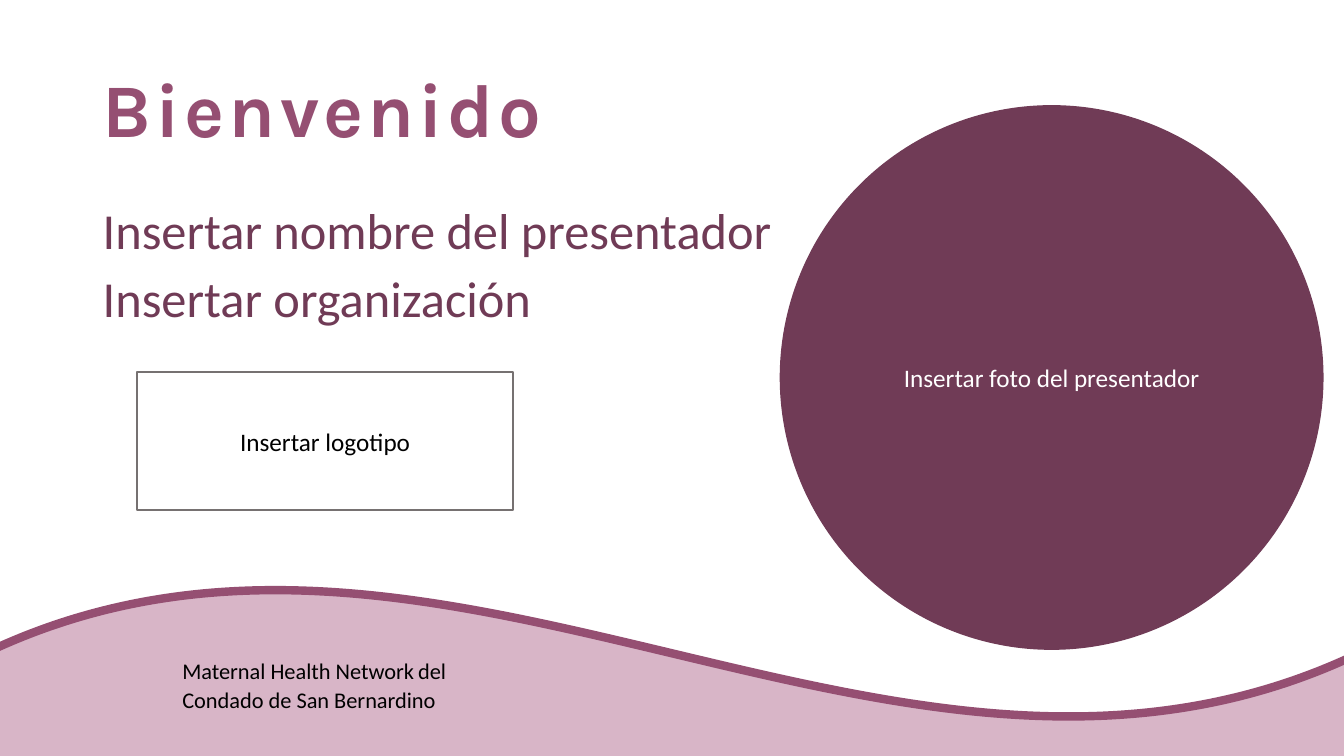
from pptx import Presentation
from pptx.dml.color import RGBColor
from pptx.enum.shapes import MSO_SHAPE
from pptx.enum.text import MSO_ANCHOR, PP_ALIGN
from pptx.util import Inches, Pt

WAVE, OVAL, RECT = MSO_SHAPE.WAVE, MSO_SHAPE.OVAL, MSO_SHAPE.RECTANGLE
TOP, MIDDLE = MSO_ANCHOR.TOP, MSO_ANCHOR.MIDDLE
LEFT, CENTER = PP_ALIGN.LEFT, PP_ALIGN.CENTER
PLUM, MAUVE, PINK = "703B56", "954F72", "D8B5C7"
WHITE, BLACK, GRAY = "FFFFFF", "000000", "767171"


def rgb(value):
    return RGBColor.from_string(value)


def add_run(paragraph, text, size, color, font="Calibri", bold=False):
    run = paragraph.add_run()
    run.text = text
    run.font.size = Pt(size)
    run.font.name = font
    run.font.bold = bold
    run.font.color.rgb = rgb(color)
    return run


prs = Presentation()
prs.slide_width, prs.slide_height = Inches(13.33), Inches(7.5)
slide = prs.slides.add_slide(prs.slide_layouts[6])
slide.background.fill.solid()
slide.background.fill.fore_color.rgb = rgb(WHITE)

panels = []
for kind, box, fill, line, width in [
    (WAVE, (-0.15, 5.83, 13.63, 5.21), PINK, MAUVE, 6),
    (OVAL, (7.74, 1.05, 5.38, 5.39), PLUM, PLUM, 1),
    (RECT, (1.36, 3.69, 3.73, 1.37), WHITE, GRAY, 1),
    (RECT, (1.71, 6.45, 3.13, 0.6), PINK, None, 0),
]:
    panel = slide.shapes.add_shape(kind, *map(Inches, box))
    panel.shadow.inherit = False
    panel.fill.solid()
    panel.fill.fore_color.rgb = rgb(fill)
    if line:
        panel.line.color.rgb = rgb(line)
        panel.line.width = Pt(width)
    else:
        panel.line.fill.background()
    panels.append(panel)
wave, photo, logo, network = panels

for panel, label, color in [
    (photo, "Insertar foto del presentador", WHITE),
    (logo, "Insertar logotipo", BLACK),
]:
    panel.text_frame.vertical_anchor = MIDDLE
    paragraph = panel.text_frame.paragraphs[0]
    paragraph.alignment = CENTER
    add_run(paragraph, label, 18, color)

network.text_frame.vertical_anchor = TOP
network.text_frame.word_wrap = True
paragraph = network.text_frame.paragraphs[0]
paragraph.alignment = LEFT
paragraph.line_spacing = 1.07
for words, size in [
    ("Maternal Health Network", 16),
    (" ", 12),
    ("del Condado de San Bernardino", 16),
]:
    add_run(paragraph, words, size, BLACK)

title = slide.shapes.add_textbox(Inches(0.92), Inches(0.4), Inches(11.5), Inches(1.45)).text_frame
title.word_wrap = True
title.vertical_anchor = MIDDLE
title.paragraphs[0].line_spacing = 0.9
heading = add_run(title.paragraphs[0], "Bienvenido", 54, MAUVE, "Karla", True)
heading.font._element.set("spc", "300")

presenter = slide.shapes.add_textbox(Inches(0.92), Inches(1.99), Inches(11.5), Inches(4.76)).text_frame
presenter.word_wrap = True
for index, line in enumerate(["Insertar nombre del presentador", "Insertar organización"]):
    paragraph = presenter.add_paragraph() if index else presenter.paragraphs[0]
    paragraph.line_spacing = 0.9
    paragraph.space_before = Pt(10 if index else 0)
    add_run(paragraph, line, 36, PLUM)

prs.save("out.pptx")
